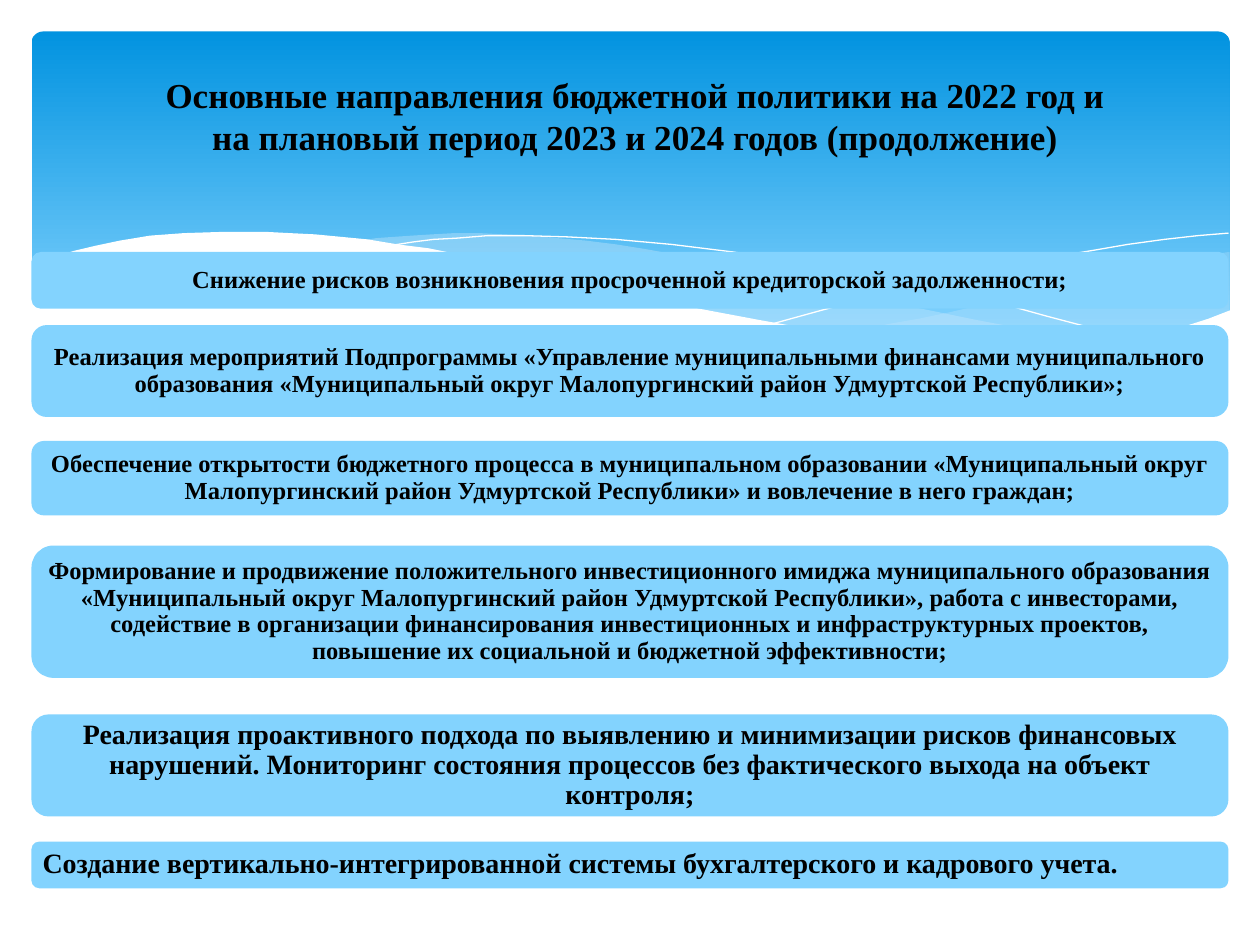
from dataclasses import dataclass

from lxml import etree
from pptx import Presentation
from pptx import util as u
from pptx.dml.color import RGBColor
from pptx.enum import shapes, text
from pptx.oxml import ns


@dataclass(frozen=True)
class Theme:
    """Colours, font and type sizes of the slide."""
    deep: RGBColor = RGBColor(0x02, 0x93, 0xE0)
    light: RGBColor = RGBColor(0x83, 0xD3, 0xFE)
    mist: RGBColor = RGBColor(0xC6, 0xE7, 0xFC)
    white: RGBColor = RGBColor(0xFF, 0xFF, 0xFF)
    ink: RGBColor = RGBColor(0, 0, 0)
    font: str = "Times New Roman"
    title: int = 20
    body: int = 14
    large: int = 16


THEME = Theme()
HUNDREDTH = u.Inches(0.01)

RIGHT_WAVE = [
    (975, 200), (948, 204), (921, 210), (891, 216), (861, 223), (832, 230), (805, 237),
    (779, 242), (753, 248), (729, 253), (706, 257), (683, 262), (661, 265), (691, 269),
    (719, 272), (745, 275), (769, 277), (792, 277), (814, 278), (835, 277), (854, 276),
    (872, 274), (889, 272), (905, 269), (921, 265), (935, 262), (949, 257), (963, 252),
    (976, 247), (976, 200)]
MIDDLE_WAVE = [
    (893, 273), (866, 269), (837, 265), (807, 260), (775, 254), (741, 247), (706, 240),
    (668, 231), (629, 222), (598, 214), (569, 208), (541, 203), (514, 198), (489, 194),
    (465, 191), (442, 189), (420, 187), (399, 186), (380, 185), (361, 185), (344, 186),
    (328, 187), (313, 188), (299, 189), (286, 191), (323, 196), (362, 203), (404, 211),
    (449, 222), (491, 232), (530, 240), (566, 248), (601, 255), (634, 261), (665, 266),
    (695, 270), (722, 274), (748, 276), (773, 277), (796, 278), (818, 278), (838, 278),
    (857, 277), (876, 275)]
FALLING_LINE = [
    (309, 195), (328, 192), (344, 190), (363, 189), (387, 187), (416, 187), (450, 188),
    (489, 190), (533, 194), (582, 200), (608, 204), (636, 208), (665, 213), (695, 219),
    (727, 226), (760, 233), (795, 241), (831, 251), (869, 261), (907, 272)]
RISING_LINE = [
    (613, 257), (653, 246), (695, 235), (748, 223), (776, 216), (806, 210), (836, 204),
    (866, 199), (895, 194), (924, 190), (951, 187), (975, 185)]
WHITE_WAVE = [
    (977, 246), (959, 253), (940, 259), (920, 265), (899, 269), (875, 273), (850, 275),
    (823, 277), (793, 276), (761, 275), (726, 272), (688, 268), (648, 262), (603, 254),
    (555, 245), (503, 233), (447, 220), (418, 213), (391, 207), (365, 202), (340, 197),
    (316, 194), (292, 190), (271, 188), (250, 186), (230, 185), (211, 184), (177, 184),
    (146, 185), (119, 187), (95, 191), (76, 195), (59, 199), (46, 203), (36, 207),
    (29, 210), (23, 213), (23, 329), (977, 329)]

CARDS = [
    (2, 0.45, THEME.body, True,
     "Снижение рисков возникновения просроченной кредиторской задолженности;"),
    (2.58, 0.73, THEME.body, True,
     "Реализация мероприятий Подпрограммы «Управление муниципальными финансами "
     "муниципального образования «Муниципальный округ Малопургинский район "
     "Удмуртской Республики»;"),
    (3.5, 0.59, THEME.body, True,
     "Обеспечение открытости бюджетного процесса в муниципальном образовании "
     "«Муниципальный округ Малопургинский район Удмуртской Республики» и вовлечение "
     "в него граждан;"),
    (4.33, 1.05, THEME.body, True,
     "Формирование и продвижение положительного инвестиционного имиджа муниципального "
     "образования «Муниципальный округ Малопургинский район Удмуртской Республики», "
     "работа с инвесторами, содействие в организации финансирования инвестиционных и "
     "инфраструктурных проектов, повышение их социальной и бюджетной эффективности;"),
    (5.67, 0.81, THEME.large, True,
     "Реализация проактивного подхода по выявлению и минимизации рисков финансовых "
     "нарушений. Мониторинг состояния процессов без фактического выхода на объект "
     "контроля;"),
    (6.68, 0.37, THEME.large, False,
     "Создание вертикально-интегрированной системы бухгалтерского и кадрового учета."),
]


def add_run(paragraph, words, size):
    """Add one bold run in the theme font."""
    run = paragraph.add_run()
    run.text = words
    run.font.name = THEME.font
    run.font.size = u.Pt(size)
    run.font.bold = True
    run.font.color.rgb = THEME.ink


def add_rounded(slide, box):
    """Add a rounded rectangle without line or shadow."""
    shape = slide.shapes.add_shape(shapes.MSO_SHAPE.ROUNDED_RECTANGLE, *map(u.Inches, box))
    shape.shadow.inherit = False
    shape.line.fill.background()
    return shape


def add_curve(slide, box, points, closed):
    """Draw points, in hundredths of an inch from the box corner."""
    builder = slide.shapes.build_freeform(*points[0], scale=HUNDREDTH)
    builder.add_line_segments(points[1:], close=closed)
    shape = builder.convert_to_shape(u.Inches(box[0]), u.Inches(box[1]))
    shape.shadow.inherit = False
    return shape


def add_wave(slide, box, points, color, opacity=100):
    """Add a filled wave with the given opacity in percent."""
    shape = add_curve(slide, box, points, True)
    shape.line.fill.background()
    shape.fill.solid()
    shape.fill.fore_color.rgb = color
    if opacity < 100:
        tint = shape.fill._xPr.find(".//" + ns.qn("a:srgbClr"))
        etree.SubElement(tint, ns.qn("a:alpha"), val=str(opacity * 1000))


def add_wave_line(slide, box, points):
    """Add a white hairline along the wave."""
    shape = add_curve(slide, box, points, False)
    shape.fill.background()
    shape.line.color.rgb = THEME.white
    shape.line.width = u.Pt(0)


def add_header(slide, box):
    """Place the gradient panel and its waves."""
    left, top, width, height = box
    panel = add_rounded(slide, (left + 0.25, top + 0.25, width - 0.49, height - 0.59))
    panel.adjustments[0] = 0.034
    panel.fill.gradient()
    panel.fill.gradient_angle = 270
    start, end = panel.fill.gradient_stops
    start.color.rgb, start.position = THEME.deep, 0
    end.color.rgb, end.position = THEME.light, 0.9
    add_wave(slide, box, RIGHT_WAVE, THEME.mist, 29)
    add_wave(slide, box, MIDDLE_WAVE, THEME.mist, 40)
    add_wave_line(slide, box, FALLING_LINE)
    add_wave_line(slide, box, RISING_LINE)
    add_wave(slide, box, WHITE_WAVE, THEME.white)


def add_title(slide, box, lines):
    """Place the centred title, one paragraph per line."""
    frame = slide.shapes.add_textbox(*map(u.Inches, box)).text_frame
    frame.word_wrap = True
    frame.vertical_anchor = text.MSO_ANCHOR.MIDDLE
    for index, line in enumerate(lines):
        paragraph = frame.add_paragraph() if index else frame.paragraphs[0]
        paragraph.alignment = text.PP_ALIGN.CENTER
        add_run(paragraph, line, THEME.title)


def add_card(slide, box, words, size, centred):
    """Place one policy direction in a rounded card."""
    card = add_rounded(slide, box)
    card.fill.solid()
    card.fill.fore_color.rgb = THEME.light
    frame = card.text_frame
    frame.word_wrap = True
    frame.vertical_anchor = text.MSO_ANCHOR.MIDDLE
    inset = u.Inches(0.06 if size == THEME.body else 0.07)
    frame.margin_left = frame.margin_right = frame.margin_top = frame.margin_bottom = inset
    paragraph = frame.paragraphs[0]
    paragraph.alignment = text.PP_ALIGN.CENTER if centred else text.PP_ALIGN.LEFT
    paragraph.line_spacing = 0.9
    add_run(paragraph, words, size)


def add_cards(slide, box):
    """Place all policy directions down the box."""
    left, top, width, _ = box
    for offset, height, size, centred, words in CARDS:
        add_card(slide, (left, top + offset, width, height), words, size, centred)


def main():
    """Build and save the presentation."""
    presentation = Presentation()
    presentation.slide_width = u.Inches(10)
    presentation.slide_height = u.Inches(7.5)
    slide = presentation.slides.add_slide(presentation.slide_layouts[6])
    add_header(slide, (0, 0, 10, 3.29))
    add_cards(slide, (0.25, 0, 9.5, 7.5))
    add_title(slide, (0.33, 0.52, 9.42, 0.8), [
        "Основные направления бюджетной политики на 2022 год и",
        "на плановый период 2023 и 2024 годов (продолжение)"])
    presentation.save("out.pptx")


if __name__ == "__main__":
    main()
